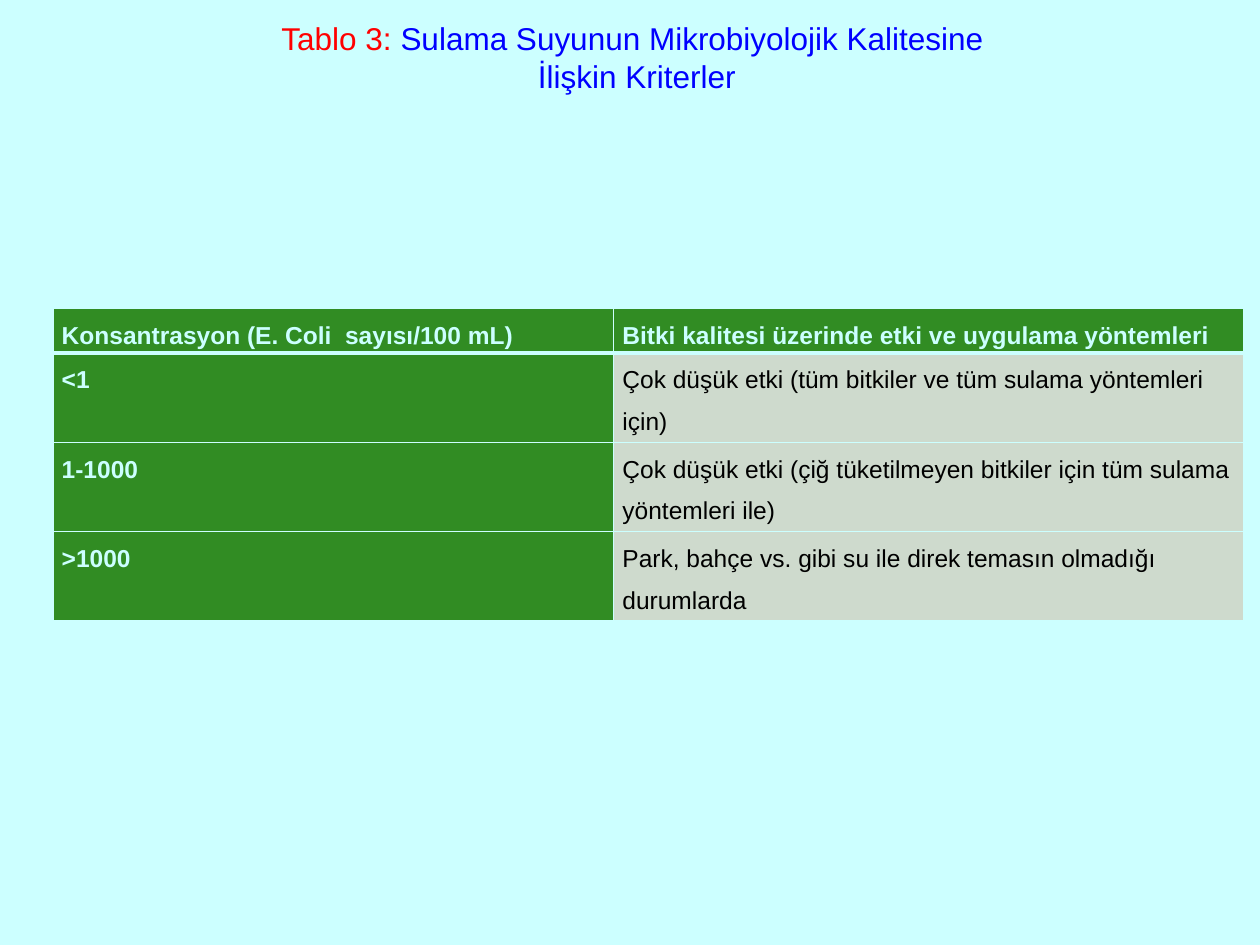
from dataclasses import dataclass

import lxml.etree
import pptx
import pptx.dml.color
import pptx.enum.text
import pptx.oxml.ns
import pptx.util
from pptx.util import Inches


@dataclass(frozen=True)
class Theme:
    font: str = "Arial"
    background: str = "CCFFFF"
    title_label: str = "FF0000"
    title_text: str = "0000FF"
    heading_fill: str = "318C23"
    heading_text: str = "CCFFFF"
    body_fill: str = "CEDACD"
    body_text: str = "000000"
    border: str = "CCFFFF"
    title_size: int = 18
    table_size: int = 14
    thin_border: int = 1
    thick_border: int = 3


@dataclass(frozen=True)
class Criterion:
    concentration: str
    effect: str


THEME = Theme()

HEADER = Criterion(
    "Konsantrasyon (E. Coli  sayısı/100 mL)",
    "Bitki kalitesi üzerinde etki ve uygulama yöntemleri",
)
CRITERIA = [
    Criterion("<1", "Çok düşük etki (tüm bitkiler ve tüm sulama yöntemleri için)"),
    Criterion(
        "1-1000",
        "Çok düşük etki (çiğ tüketilmeyen bitkiler için tüm sulama yöntemleri ile)",
    ),
    Criterion(">1000", "Park, bahçe vs. gibi su ile direk temasın olmadığı durumlarda"),
]


def rgb(color: str) -> pptx.dml.color.RGBColor:
    return pptx.dml.color.RGBColor.from_string(color)


def add_run(paragraph, text: str, size: int, color: str, bold: bool = False) -> None:
    run = paragraph.add_run()
    run.text = text
    run.font.name = THEME.font
    run.font.size = pptx.util.Pt(size)
    run.font.bold = bold
    run.font.color.rgb = rgb(color)


def set_border(cell, side: str, width: int) -> None:
    qn = pptx.oxml.ns.qn
    properties = cell._tc.get_or_add_tcPr()
    line = lxml.etree.SubElement(
        properties, qn(f"a:ln{side}"), w=str(pptx.util.Pt(width))
    )
    fill = lxml.etree.SubElement(line, qn("a:solidFill"))
    lxml.etree.SubElement(fill, qn("a:srgbClr"), val=THEME.border)


def format_cell(cell, text: str, is_heading: bool, widths: dict[str, int]) -> None:
    # Borders come before the fill in the cell properties
    for side, width in widths.items():
        set_border(cell, side, width)
    cell.fill.solid()
    cell.fill.fore_color.rgb = rgb(
        THEME.heading_fill if is_heading else THEME.body_fill
    )
    cell.margin_left = cell.margin_right = Inches(0.07)
    cell.margin_top = cell.margin_bottom = 0
    paragraph = cell.text_frame.paragraphs[0]
    paragraph.line_spacing = 1.5
    color = THEME.heading_text if is_heading else THEME.body_text
    add_run(paragraph, text, THEME.table_size, color, bold=is_heading)


def add_title(slide) -> None:
    title = slide.shapes.title
    title.left, title.top = Inches(0.35), Inches(0.1)
    title.width, title.height = Inches(9.34), Inches(0.71)
    frame = title.text_frame
    frame.word_wrap = True
    frame.auto_size = pptx.enum.text.MSO_AUTO_SIZE.SHAPE_TO_FIT_TEXT
    frame.vertical_anchor = pptx.enum.text.MSO_ANCHOR.TOP
    first, second = frame.paragraphs[0], frame.add_paragraph()
    for paragraph in (first, second):
        paragraph.alignment = pptx.enum.text.PP_ALIGN.CENTER
    add_run(first, "Tablo 3: ", THEME.title_size, THEME.title_label)
    add_run(
        first,
        "Sulama Suyunun Mikrobiyolojik Kalitesine",
        THEME.title_size,
        THEME.title_text,
    )
    add_run(second, " İlişkin Kriterler", THEME.title_size, THEME.title_text)


def add_criteria_table(slide, header: Criterion, criteria: list[Criterion]) -> None:
    rows = [header, *criteria]
    header_height, row_height = Inches(0.33), Inches(0.71)
    column_widths = [Inches(4.45), Inches(5)]
    table = slide.shapes.add_table(
        len(rows),
        len(column_widths),
        Inches(0.42),
        Inches(2.45),
        sum(column_widths),
        header_height + row_height * len(criteria),
    ).table
    for column, width in zip(table.columns, column_widths):
        column.width = width
    for row_index, criterion in enumerate(rows):
        table.rows[row_index].height = row_height if row_index else header_height
        widths = dict.fromkeys("LRTB", THEME.thin_border)
        # The rule under the header is thick on both sides of the shared edge
        if row_index == 0:
            widths["B"] = THEME.thick_border
        elif row_index == 1:
            widths["T"] = THEME.thick_border
        texts = (criterion.concentration, criterion.effect)
        for column_index, text in enumerate(texts):
            is_heading = row_index == 0 or column_index == 0
            format_cell(table.cell(row_index, column_index), text, is_heading, widths)


def main() -> None:
    presentation = pptx.Presentation()
    presentation.slide_width = Inches(10)
    presentation.slide_height = Inches(7.5)

    # Title-only slide with a plain background
    slide = presentation.slides.add_slide(presentation.slide_layouts[5])
    slide.background.fill.solid()
    slide.background.fill.fore_color.rgb = rgb(THEME.background)

    add_title(slide)
    add_criteria_table(slide, HEADER, CRITERIA)
    presentation.save("out.pptx")


if __name__ == "__main__":
    main()
